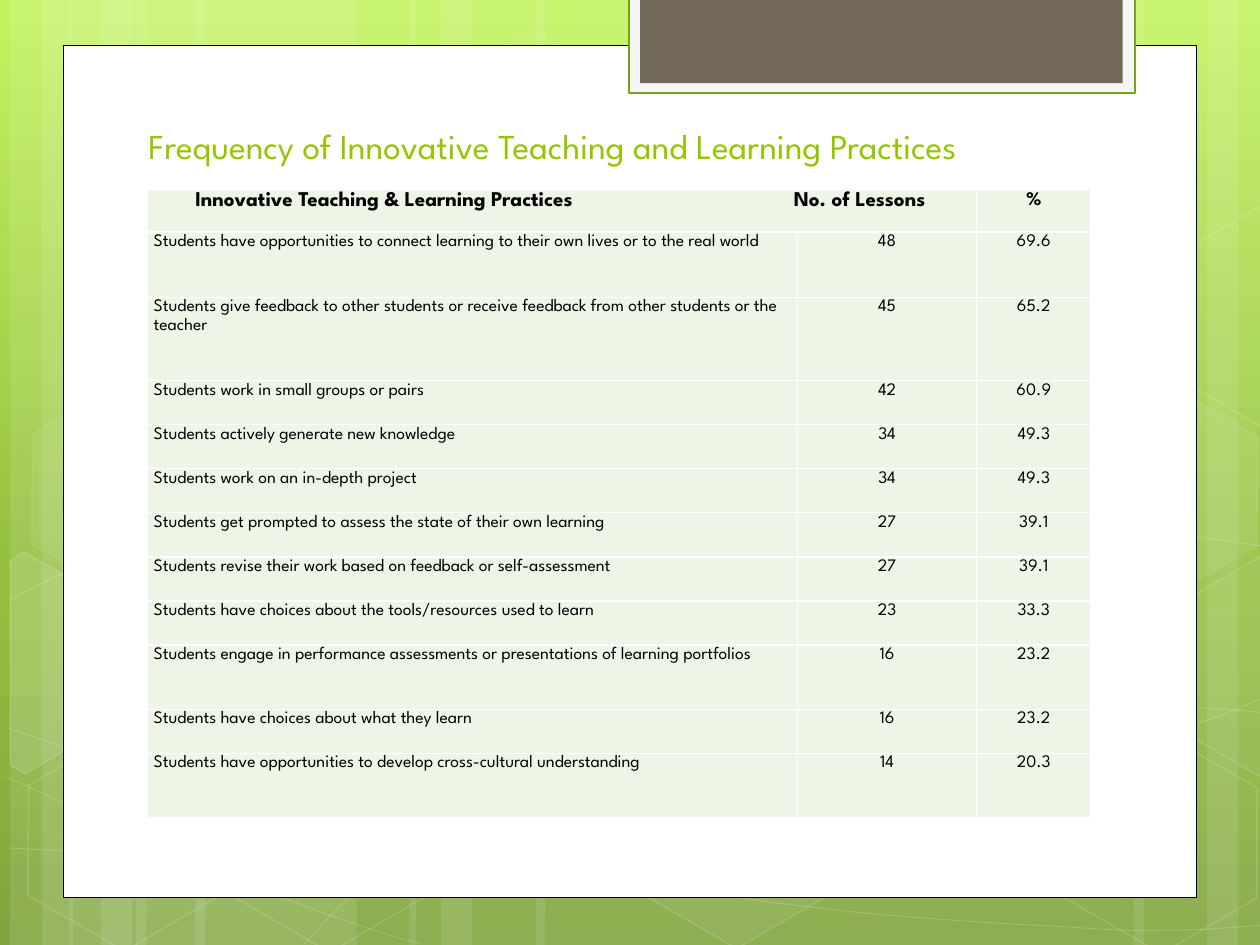
import copy
import math

import pptx
import pptx.dml.color
import pptx.enum.shapes
import pptx.enum.text
import pptx.oxml
import pptx.oxml.ns
import pptx.util
from pptx.util import Inches

RGBColor = pptx.dml.color.RGBColor
Pt = pptx.util.Pt
qn = pptx.oxml.ns.qn
SHAPE = pptx.enum.shapes.MSO_SHAPE
ALIGN = pptx.enum.text.PP_ALIGN

WHITE = RGBColor(0xFF, 0xFF, 0xFF)
BLACK = RGBColor(0x00, 0x00, 0x00)
LIME = RGBColor(0xC3, 0xF3, 0x5F)
GREEN = RGBColor(0x93, 0xBF, 0x3F)
OLIVE = RGBColor(0x81, 0xA5, 0x3E)
TAB_FRAME = RGBColor(0xF5, 0xF5, 0xF5)
TAB_EDGE = RGBColor(0x74, 0xA5, 0x10)
TAB_BROWN = RGBColor(0x71, 0x68, 0x5A)
TITLE_GREEN = RGBColor(0x94, 0xC6, 0x00)
CELL_FILL = RGBColor(0xEE, 0xF5, 0xE7)
FONT = "League Spartan"


def style_shape(shape, fill=None, fill_alpha=100, line=None, width=1, line_alpha=100):
    """Set fill, line and their opacity in percent."""
    shape.shadow.inherit = False
    for part, color, alpha, place in (
        (shape.fill, fill, fill_alpha, "a:solidFill"),
        (shape.line.fill, line, line_alpha, "a:ln/a:solidFill"),
    ):
        if color is None:
            part.background()
            continue
        part.solid()
        part.fore_color.rgb = color
        if alpha < 100:
            steps = "/".join(qn(step) for step in place.split("/"))
            color_element = shape.element.spPr.find(steps)[0]
            color_element.append(pptx.oxml.parse_xml(
                f'<a:alpha {pptx.oxml.ns.nsdecls("a")} val="{alpha * 1000}"/>'))
    if line is not None:
        shape.line.width = Pt(width)


def add_outline(points, close):
    """Draw straight segments through points given in inches."""
    corners = [(Inches(x), Inches(y)) for x, y in points]
    builder = slide.shapes.build_freeform(*corners[0], scale=1)
    builder.add_line_segments(corners[1:], close=close)
    return builder.convert_to_shape()


presentation = pptx.Presentation()
presentation.slide_width, presentation.slide_height = Inches(10), Inches(7.5)
slide = presentation.slides.add_slide(presentation.slide_layouts[6])

# Background gradient, top to bottom
background = slide.background.fill
background.gradient()
background.gradient_angle = 270
stop_list = slide.element.find(".//" + qn("a:gsLst"))
stop_list.append(copy.deepcopy(stop_list[-1]))
for stop, position, color in zip(background.gradient_stops, (0, 0.62, 1), (LIME, GREEN, OLIVE)):
    stop.position = position
    stop.color.rgb = color

# Translucent vertical bands: left, width
for left, width in [
    (1.08, 1.75), (0.08, 0.5), (0.33, 0.83), (1.55, 1.75), (0.55, 0.5), (0.8, 0.83),
    (7.33, 1.75), (9.58, 0.5), (9, 0.83), (4.25, 3.08), (3.25, 0.5), (3.5, 0.83),
]:
    band = slide.shapes.add_shape(SHAPE.RECTANGLE, Inches(left), 0, Inches(width), Inches(7.5))
    style_shape(band, WHITE, 10)

# Faint waves: a start point, then two control points and an end point per curve
waves = [
    [(0.07, 6.73), (0.61, 6.76), (1.15, 6.79), (1.9, 6.78), (2.65, 6.77), (3.58, 6.75),
     (4.58, 6.65), (5.58, 6.55), (7, 6.36), (7.92, 6.17), (8.83, 5.98), (9.77, 5.68),
     (10.07, 5.51)],
    [(0.07, 4.77), (0.36, 4.61), (0.65, 4.46), (1.21, 4.31), (1.78, 4.16), (2.59, 3.94),
     (3.47, 3.87), (4.36, 3.8), (5.44, 3.79), (6.54, 3.87), (7.64, 3.95), (9.47, 4.26),
     (10.07, 4.34)],
    [(0.06, 6.17), (1.27, 6.72), (2.47, 7.27), (3.34, 7.49)],
    [(0.07, 5.78), (0.38, 5.89), (0.7, 6), (1.28, 6.16), (1.86, 6.31), (2.73, 6.56),
     (3.57, 6.73), (4.4, 6.9), (5.45, 7.08), (6.28, 7.18), (7.11, 7.29), (8, 7.33),
     (8.53, 7.36), (9.05, 7.4), (9.19, 7.38), (9.45, 7.38), (9.71, 7.37), (9.89, 7.35),
     (10.07, 7.34)],
    [(2.42, 7.49), (2.6, 7.29), (2.78, 7.09), (3.02, 6.91), (3.26, 6.73), (3.6, 6.53),
     (3.88, 6.39), (4.16, 6.25), (4.33, 6.19), (4.7, 6.09), (5.06, 5.99), (5.73, 5.85),
     (6.08, 5.78), (6.44, 5.71), (6.49, 5.71), (6.8, 5.69), (7.11, 5.66), (7.6, 5.63),
     (7.94, 5.62), (8.29, 5.61), (8.86, 5.62), (8.86, 5.62), (9.08, 5.62), (9.31, 5.62),
     (9.53, 5.62), (9.71, 5.63), (9.88, 5.64), (9.97, 5.65), (10.06, 5.66), (10.03, 5.65),
     (10.06, 5.66)],
]
for points in waves:
    wave = add_outline(points, close=False)
    # Join every three segments into one Bezier curve
    segments = list(wave.element.iter(qn("a:lnTo")))
    for start in range(0, len(segments), 3):
        curve = pptx.oxml.parse_xml(f'<a:cubicBezTo {pptx.oxml.ns.nsdecls("a")}/>')
        segments[start].addprevious(curve)
        for segment in segments[start:start + 3]:
            curve.append(segment[0])
            segment.getparent().remove(segment)
    style_shape(wave, line=WHITE, width=0.5, line_alpha=20)

# Hexagons: left, top, fill opacity (0 is unfilled), line opacity
for left, top, fill_alpha, line_alpha in [
    (3.34, 0.36, 4, 8), (4.97, 5.89, 6, 12), (0.11, 5.91, 0, 12), (0.14, 3.12, 7, 8),
    (1.74, 5.92, 0, 12), (7.53, 4.53, 10, 12), (8.34, 5.93, 0, 12), (8.34, 3.14, 7, 8),
]:
    hexagon = slide.shapes.add_shape(
        SHAPE.HEXAGON, Inches(left), Inches(top), Inches(1.75), Inches(1.52))
    hexagon.adjustments[0] = 0.285
    hexagon.rotation = 30
    style_shape(hexagon, WHITE if fill_alpha else None, fill_alpha, WHITE, 1, line_alpha)

# Hexagons cut off by the slide edges, turned 30 degrees about their centres
cosine, sine = math.cos(math.radians(30)), math.sin(math.radians(30))
for (center_x, center_y), corners, fill_alpha in [
    ((0.36, 5.35), [(0.08, 4.45), (0.19, 4.38), (0.96, 4.82), (0.95, 5.7),
                    (0.2, 6.14), (0.08, 6.07)], 10),
    ((9.85, 5.2), [(9.26, 4.85), (10.01, 4.41), (10.09, 4.46), (10.09, 6.13),
                   (10.02, 6.17), (9.26, 5.73)], 4),
    ((9.85, 2.41), [(9.26, 2.07), (10.01, 1.63), (10.1, 1.68), (10.09, 3.35),
                    (10.02, 3.39), (9.26, 2.95)], 0),
]:
    offsets = [(x - center_x, y - center_y) for x, y in corners]
    cut_hexagon = add_outline(
        [(center_x + x * cosine + y * sine, center_y - x * sine + y * cosine)
         for x, y in offsets], close=True)
    cut_hexagon.rotation = 30
    style_shape(cut_hexagon, WHITE if fill_alpha else None, fill_alpha, WHITE, 1, 12)

# White page and the tab at its top
for left, top, width, height, fill, line, line_width in [
    (0.5, 0.36, 9, 6.76, WHITE, BLACK, 0.5),
    (4.99, -0.02, 4.02, 0.76, TAB_FRAME, TAB_EDGE, 1.25),
    (5.08, -0.02, 3.83, 0.68, TAB_BROWN, None, 0),
]:
    panel = slide.shapes.add_shape(
        SHAPE.RECTANGLE, Inches(left), Inches(top), Inches(width), Inches(height))
    style_shape(panel, fill, line=line, width=line_width)

# Title
title = slide.shapes.add_textbox(Inches(1.08), Inches(0.83), Inches(8.11), Inches(0.54))
title.text_frame.word_wrap = True
title.text_frame.vertical_anchor = pptx.enum.text.MSO_ANCHOR.BOTTOM
paragraph = title.text_frame.paragraphs[0]
paragraph.text = "Frequency of Innovative Teaching and Learning Practices"
paragraph.font.name, paragraph.font.size = FONT, Pt(20)
paragraph.font.color.rgb = TITLE_GREEN

# Table of practices; the header's first cell spans two columns
rows = [
    ("Innovative Teaching & Learning Practices\tNo. of Lessons", "", "%"),
    ("Students have opportunities to connect learning to their own lives or to the real world", "48", "69.6"),
    ("Students give feedback to other students or receive feedback from other students or the teacher", "45", "65.2"),
    ("Students work in small groups or pairs", "42", "60.9"),
    ("Students actively generate new knowledge", "34", "49.3"),
    ("Students work on an in-depth project", "34", "49.3"),
    ("Students get prompted to assess the state of their own learning", "27", "39.1"),
    ("Students revise their work based on feedback or self-assessment", "27", "39.1"),
    ("Students have choices about the tools/resources used to learn", "23", "33.3"),
    ("Students engage in performance assessments or presentations of learning portfolios", "16", "23.2"),
    ("Students have choices about what they learn", "16", "23.2"),
    ("Students have opportunities to develop cross-cultural understanding", "14", "20.3"),
]
special_heights = {0: 0.34, 1: 0.52, 2: 0.66, 9: 0.51, 11: 0.51}
table = slide.shapes.add_table(
    len(rows), 3, Inches(1.17), Inches(1.5), Inches(7.5), Inches(4.99)).table
table.first_row = table.horz_banding = False
for column, width in zip(table.columns, (5.16, 1.42, 0.91)):
    column.width = Inches(width)
table.cell(0, 0).merge(table.cell(0, 1))

for row_index, row in enumerate(rows):
    table.rows[row_index].height = Inches(special_heights.get(row_index, 0.35))
    for column_index, text in enumerate(row):
        cell = table.cell(row_index, column_index)
        cell.margin_left = cell.margin_right = Inches(0.05)
        cell.margin_top = cell.margin_bottom = 0
        cell.fill.solid()
        cell.fill.fore_color.rgb = CELL_FILL
        for index, side in enumerate(("lnL", "lnR", "lnT", "lnB")):
            cell._tc.get_or_add_tcPr().insert(index, pptx.oxml.parse_xml(
                f'<a:{side} {pptx.oxml.ns.nsdecls("a")} w="{Pt(1)}"><a:solidFill>'
                f'<a:srgbClr val="{WHITE}"/></a:solidFill></a:{side}>'))
        if cell.is_spanned:
            continue
        paragraph = cell.text_frame.paragraphs[0]
        paragraph.text = text
        paragraph.alignment = ALIGN.CENTER if column_index else ALIGN.LEFT
        paragraph.line_spacing, paragraph.space_after = 1.15, Pt(10)
        paragraph.font.name, paragraph.font.size = FONT, Pt(10)
        paragraph.font.bold = row_index == 0
        paragraph.font.color.rgb = BLACK

# Header sizes, and a tab stop for the second heading
table.cell(0, 2).text_frame.paragraphs[0].font.size = Pt(11)
header = table.cell(0, 0)
header.margin_left = Inches(0.38)
paragraph = header.text_frame.paragraphs[0]
paragraph.font.size = Pt(12)
paragraph._p.pPr.find(qn("a:defRPr")).addprevious(pptx.oxml.parse_xml(
    f'<a:tabLst {pptx.oxml.ns.nsdecls("a")}><a:tab pos="{Inches(4.75)}" algn="l"/></a:tabLst>'))

presentation.save("out.pptx")
